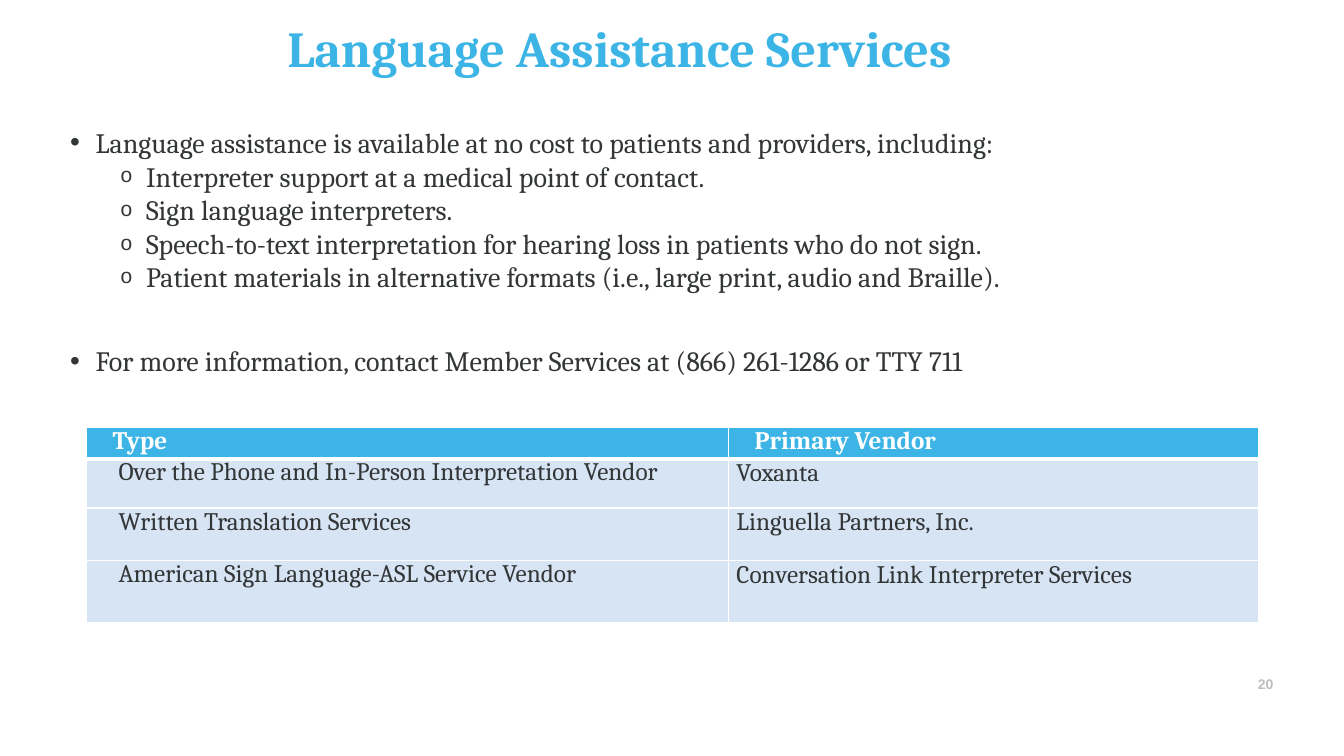
from dataclasses import dataclass

from lxml import etree
from pptx import Presentation
from pptx.dml.color import RGBColor
from pptx.enum import text
from pptx.oxml import ns
from pptx.util import Cm, Pt

TITLE = "Language Assistance Services"
POINTS = [
    (0, 0, "Language assistance is available at no cost to patients and providers, including:"),
    (1, 0, "Interpreter support at a medical point of contact."),
    (1, 0, "Sign language interpreters."),
    (1, 0, "Speech-to-text interpretation for hearing loss in patients who do not sign."),
    (1, 0, "Patient materials in alternative formats (i.e., large print, audio and Braille)."),
    (0, 36, "For more information, contact Member Services at (866) 261-1286 or TTY 711"),
]
VENDORS = [
    ("Type", "Primary Vendor"),
    ("Over the Phone and In-Person Interpretation Vendor", "Voxanta"),
    ("Written Translation Services", "Linguella Partners, Inc."),
    ("American Sign Language-ASL Service Vendor", "Conversation Link Interpreter Services"),
]
PAGE_NUMBER = "20"

TITLE_AREA = (7.24, 0.38, 19.38, 1.6)
POINTS_AREA = (1.75, 3.1, 25.37, 6.38)
NUMBER_AREA = (31.6, 17.02, 0.64, 0.46)
TABLE_CORNER = (2.18, 10.77)
COLUMN_WIDTHS = (16.18, 13.36)
ROW_HEIGHTS = (0.79, 1.24, 1.32, 1.57)
HEADER_INDENTS = (0.66, 0.66)
BODY_INDENTS = (0.81, 0.2)
BODY_LEADING = (20.4, 21)
BULLETS = [("•", 0.66, 100), ("o", 1.93, 75)]
BULLET_HANG = 0.64


@dataclass(frozen=True)
class Theme:
    serif: str = "Cambria"
    sans: str = "Arial"
    accent: str = "3CB5E6"
    ink: str = "333637"
    pale: str = "D7E4F4"
    muted: str = "BEBEBE"
    white: str = "FFFFFF"
    title_size: int = 36
    body_size: int = 20
    table_size: int = 18
    number_size: int = 10


THEME = Theme()


def place(box, area):
    box.left, box.top, box.width, box.height = map(Cm, area)


def prepare_frame(box, top_inset=0):
    frame = box.text_frame
    frame.word_wrap = True
    frame.auto_size = text.MSO_AUTO_SIZE.NONE
    frame.vertical_anchor = text.MSO_ANCHOR.TOP
    frame.margin_left = frame.margin_right = frame.margin_bottom = 0
    frame.margin_top = Cm(top_inset)
    return frame


def add_span(para, words, size, color, bold=False, family=THEME.serif):
    para.alignment = text.PP_ALIGN.LEFT
    span = para.add_run()
    span.text = words
    span.font.name = family
    span.font.size = Pt(size)
    span.font.bold = bold
    span.font.color.rgb = RGBColor.from_string(color)


def indent(para, left, hang=0):
    props = para._p.get_or_add_pPr()
    props.set("marL", str(Cm(left)))
    props.set("indent", str(-Cm(hang)))
    return props


def add_bullet(para, level):
    mark, left, percent = BULLETS[level]
    props = indent(para, left, BULLET_HANG)
    for tag, key, value in (
        ("a:buSzPct", "val", str(percent * 1000)),
        ("a:buFont", "typeface", THEME.sans),
        ("a:buChar", "char", mark),
    ):
        etree.SubElement(props, ns.qn(tag)).set(key, value)


def add_borders(cell, row):
    props = cell._tc.get_or_add_tcPr()
    widths = {"L": 1, "R": 1, "T": 3 if row == 1 else 1, "B": 3 if row == 0 else 1}
    for order, (side, width) in enumerate(widths.items()):
        line = etree.Element(ns.qn(f"a:ln{side}"), w=str(Pt(width)))
        fill = etree.SubElement(line, ns.qn("a:solidFill"))
        etree.SubElement(fill, ns.qn("a:srgbClr"), val=THEME.white)
        props.insert(order, line)


def add_title(page):
    box = page.shapes.title
    place(box, TITLE_AREA)
    para = prepare_frame(box, 0.06).paragraphs[0]
    add_span(para, TITLE, THEME.title_size, THEME.accent, True)


def add_points(page):
    box = page.placeholders[1]
    place(box, POINTS_AREA)
    frame = prepare_frame(box, 0.06)
    for order, (level, gap, words) in enumerate(POINTS):
        para = frame.add_paragraph() if order else frame.paragraphs[0]
        para.level = level
        add_bullet(para, level)
        para.space_before = Pt(gap)
        add_span(para, words, THEME.body_size, THEME.ink)


def add_vendors(page):
    size = (sum(COLUMN_WIDTHS), sum(ROW_HEIGHTS))
    table = page.shapes.add_table(
        len(VENDORS), len(COLUMN_WIDTHS), *map(Cm, TABLE_CORNER + size)
    ).table
    table.horz_banding = False
    for column, width in zip(table.columns, COLUMN_WIDTHS):
        column.width = Cm(width)
    for row, (entries, height) in enumerate(zip(VENDORS, ROW_HEIGHTS)):
        table.rows[row].height = Cm(height)
        header = row == 0
        for column, words in enumerate(entries):
            cell = table.cell(row, column)
            cell.margin_left = cell.margin_right = cell.margin_top = cell.margin_bottom = 0
            cell.vertical_anchor = text.MSO_ANCHOR.TOP
            cell.fill.solid()
            cell.fill.fore_color.rgb = RGBColor.from_string(THEME.accent if header else THEME.pale)
            add_borders(cell, row)
            para = cell.text_frame.paragraphs[0]
            indent(para, (HEADER_INDENTS if header else BODY_INDENTS)[column])
            para.line_spacing = Pt(BODY_LEADING[0 if header else column])
            add_span(para, words, THEME.table_size, THEME.white if header else THEME.ink, header)


def add_page_number(page):
    box = page.shapes.add_textbox(*map(Cm, NUMBER_AREA))
    para = prepare_frame(box).paragraphs[0]
    indent(para, 0.1)
    add_span(para, PAGE_NUMBER, THEME.number_size, THEME.muted, True, THEME.sans)


def main():
    deck = Presentation()
    deck.slide_width, deck.slide_height = Cm(33.87), Cm(19.05)
    page = deck.slides.add_slide(deck.slide_layouts[1])
    add_title(page)
    add_points(page)
    add_vendors(page)
    add_page_number(page)
    deck.save("out.pptx")


if __name__ == "__main__":
    main()
